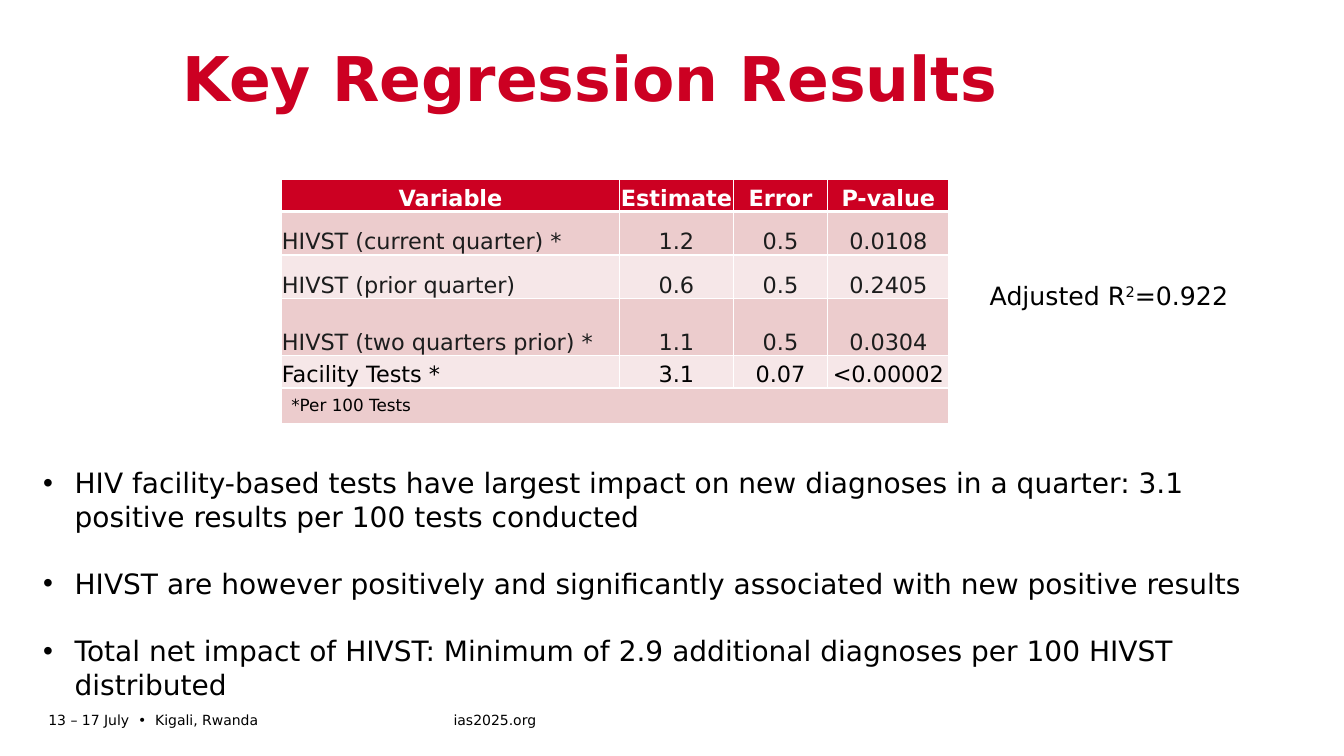
import pptx
import pptx.util
import pptx.dml.color
import pptx.enum.shapes
import pptx.enum.text
import pptx.oxml
import pptx.oxml.ns

THEME = {
    "font": "DejaVu Sans",
    "red": "CC0022", "white": "FFFFFF", "black": "000000", "ink": "1C1D1D",
    "band_dark": "ECCCCD", "band_light": "F6E7E8",
    "title": 44, "body": 20, "note": 18, "table": 16, "small": 12, "footer": 10,
}
MIDDLE = pptx.enum.text.MSO_ANCHOR.MIDDLE
BOTTOM = pptx.enum.text.MSO_ANCHOR.BOTTOM
CENTER = pptx.enum.text.PP_ALIGN.CENTER
LEFT = pptx.enum.text.PP_ALIGN.LEFT

presentation = pptx.Presentation()
presentation.slide_width = pptx.util.Inches(13.33)
presentation.slide_height = pptx.util.Inches(7.5)
slide = presentation.slides.add_slide(presentation.slide_layouts[6])

# Grid of 160 columns by 90 rows
COLUMN = presentation.slide_width / 160
ROW = presentation.slide_height / 90


def place(left, top, width, height):
    return [round(size) for size in (left * COLUMN, top * ROW, width * COLUMN, height * ROW)]


def add_run(paragraph, text, size, color="black", bold=False):
    run = paragraph.add_run()
    run.text = text
    run.font.name = THEME["font"]
    run.font.size = pptx.util.Pt(THEME[size])
    run.font.bold = bold
    run.font.color.rgb = pptx.dml.color.RGBColor.from_string(THEME[color])
    return run


# Footer and title
for text, box, size, color, anchor in [
    ("13 – 17 July  •  Kigali, Rwanda", (5.76, 84.24, 48.24, 2.88), "footer", "black", MIDDLE),
    ("ias2025.org", (54, 84.24, 23.16, 2.88), "footer", "black", MIDDLE),
    ("Key Regression Results", (21.72, 5.76, 132.48, 16.08), "title", "red",
     pptx.enum.text.MSO_ANCHOR.TOP),
]:
    frame = slide.shapes.add_textbox(*place(*box)).text_frame
    frame.word_wrap = True
    frame.vertical_anchor = anchor
    frame.margin_left = frame.margin_right = frame.margin_top = frame.margin_bottom = 0
    if size == "title":
        frame.paragraphs[0].line_spacing = 0.9
    add_run(frame.paragraphs[0], text, size, color, bold=size == "title")

# Regression table
records = [
    ["Variable", "Estimate", "Error", "P-value"],
    ["HIVST (current quarter) *", "1.2", "0.5", "0.0108"],
    ["HIVST (prior quarter)", "0.6", "0.5", "0.2405"],
    ["HIVST (two quarters prior) *", "1.1", "0.5", "0.0304"],
    ["Facility Tests *", "3.1", "0.07", "<0.00002"],
    ["*Per 100 Tests", "", "", ""],
]
column_widths = [40.3, 13.5, 11.28, 14.4]
row_heights = [3.84, 5.16, 5.16, 6.84, 3.84, 4.2]
text_colors = ["white", "ink", "ink", "ink", "black", "black"]
note_row = len(records) - 1
table = slide.shapes.add_table(
    len(records), len(column_widths),
    *place(33.48, 21.36, sum(column_widths), sum(row_heights))).table
for column, width in zip(table.columns, column_widths):
    column.width = round(width * COLUMN)
for row, height in zip(table.rows, row_heights):
    row.height = round(height * ROW)
table.cell(note_row, 0).merge(table.cell(note_row, len(column_widths) - 1))

for row_index, record in enumerate(records):
    for column_index, text in enumerate(record):
        cell = table.cell(row_index, column_index)
        properties = cell._tc.get_or_add_tcPr()
        for side in "LRTB":
            under_header = (row_index, side) in [(0, "B"), (1, "T")]
            properties.append(pptx.oxml.parse_xml(
                f'<a:ln{side} {pptx.oxml.ns.nsdecls("a")} w="{pptx.util.Pt(3 if under_header else 1)}">'
                f'<a:solidFill><a:srgbClr val="{THEME["white"]}"/></a:solidFill></a:ln{side}>'))
        fill = "red" if row_index == 0 else "band_dark" if row_index % 2 else "band_light"
        cell.fill.solid()
        cell.fill.fore_color.rgb = pptx.dml.color.RGBColor.from_string(THEME[fill])
        if row_index == note_row:
            cell.vertical_anchor = MIDDLE
        else:
            cell.vertical_anchor = BOTTOM
            cell.margin_left = cell.margin_right = cell.margin_top = pptx.util.Pt(0.5)
            cell.margin_bottom = 0
        if text:
            paragraph = cell.text_frame.paragraphs[0]
            centered = row_index == 0 or column_index > 0
            paragraph.alignment = CENTER if centered else LEFT
            add_run(paragraph, text, "small" if row_index == note_row else "table",
                    text_colors[row_index], bold=row_index == 0)

# Findings
findings = slide.shapes.add_shape(
    pptx.enum.shapes.MSO_SHAPE.RECTANGLE, *place(3.96, 54.84, 150.48, 29.52))
findings.shadow.inherit = False
findings.fill.solid()
findings.fill.fore_color.rgb = pptx.dml.color.RGBColor.from_string(THEME["white"])
findings.line.fill.background()
frame = findings.text_frame
frame.word_wrap = True
frame.vertical_anchor = pptx.enum.text.MSO_ANCHOR.TOP
indent = round(3.75 * COLUMN)
for index, text in enumerate([
    "HIV facility-based tests have largest impact on new diagnoses in a quarter: "
    "3.1 positive results per 100 tests conducted",
    "HIVST are however positively and significantly associated with new positive results",
    "Total net impact of HIVST: Minimum of 2.9 additional diagnoses per 100 HIVST distributed",
]):
    paragraph = frame.add_paragraph() if index else frame.paragraphs[0]
    paragraph.alignment = LEFT
    if index:
        paragraph.space_before = pptx.util.Pt(24)
    properties = paragraph._p.get_or_add_pPr()
    properties.set("marL", str(indent))
    properties.set("indent", str(-indent))
    for bullet in ('buFont {} typeface="Arial"', 'buChar {} char="•"'):
        properties.append(pptx.oxml.parse_xml(
            f'<a:{bullet.format(pptx.oxml.ns.nsdecls("a"))}/>'))
    add_run(paragraph, text, "body")

# Goodness of fit
frame = slide.shapes.add_textbox(*place(116.64, 32.76, 37.44, 4.8)).text_frame
frame.word_wrap = True
add_run(frame.paragraphs[0], "Adjusted R", "note")
exponent = add_run(frame.paragraphs[0], "2", "note")
exponent.font._element.set("baseline", "30000")
add_run(frame.paragraphs[0], "=0.922", "note")

presentation.save("out.pptx")
